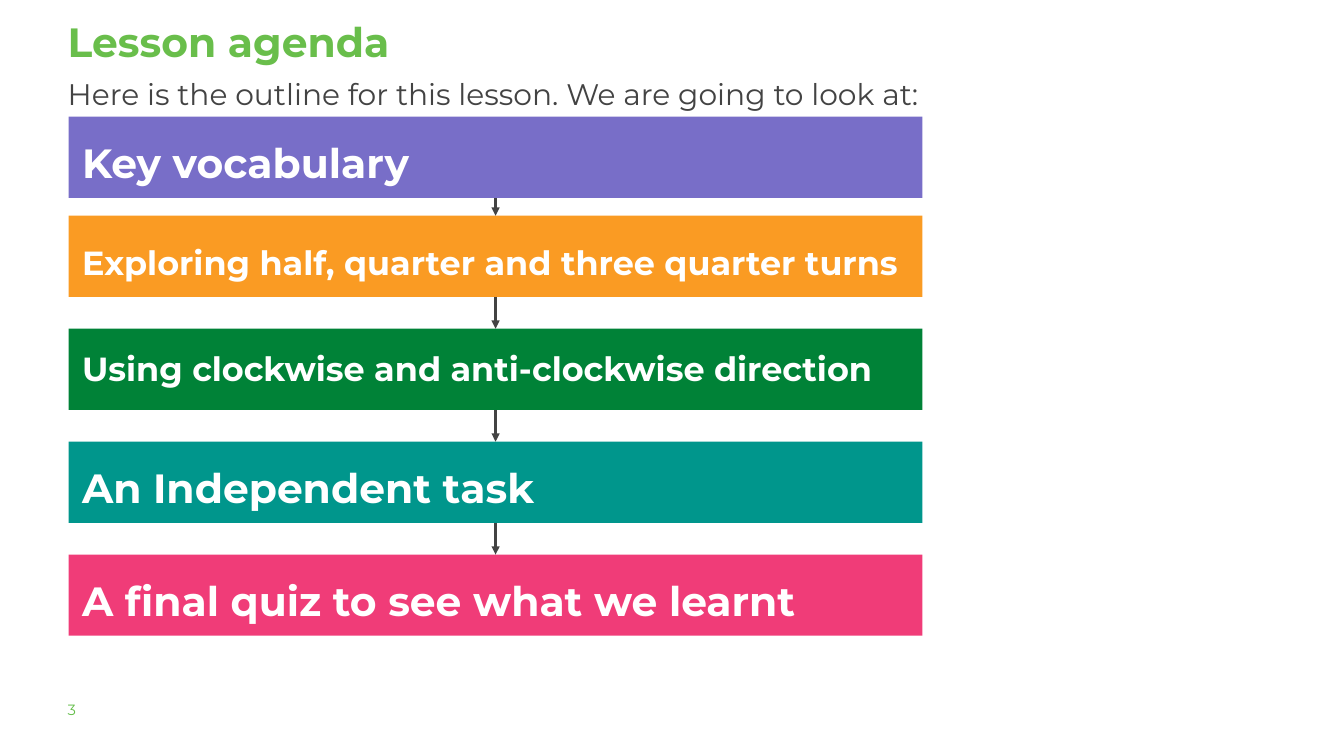
from lxml import etree
from pptx import Presentation
from pptx.dml.color import RGBColor
from pptx.enum import shapes, text
from pptx.oxml.ns import qn
from pptx.util import Pt

COLOURS = {
    "title": "69BE4B", "number": "65BE4B", "dark": "434343", "white": "FFFFFF",
    "purple": "786EC8", "orange": "FA9B23", "green": "008237",
    "teal": "00968C", "pink": "F03C78",
}
FONT = "Montserrat"
TOP, MIDDLE = text.MSO_ANCHOR.TOP, text.MSO_ANCHOR.MIDDLE

# wording, (left, top, width, height), size, colour, bold, line spacing
LABELS = [
    ("Lesson agenda", (54.7, 7.2, 976.3, 67.7), 33, "title", True, 1.15),
    ("Here is the outline for this lesson. We are going to look at:",
     (54.7, 52.6, 718.6, 41.8), 24, "dark", False, 1.3),
    ("3", (54.7, 565.9, 85.7, 21.6), 12, "number", False, 1),
]
# wording, fill, gap above, size, line spacing, anchor
STEPS = [
    ("Key vocabulary", "purple", 0, 33, 1.15, TOP),
    ("Exploring half, quarter and three quarter turns", "orange", 14.4, 27, 1.3, MIDDLE),
    ("Using clockwise and anti-clockwise direction", "green", 25.7, 27, 1.15, TOP),
    ("An Independent task", "teal", 25.7, 33, 1.15, TOP),
    ("A final quiz to see what we learnt", "pink", 25.7, 33, 1.15, TOP),
]
STEP_LEFT, STEP_TOP, STEP_WIDTH, STEP_HEIGHT = 55.5, 94.3, 689.7, 65.6
STEP_INSET = 10.8


def colour(name):
    return RGBColor.from_string(COLOURS[name])


def write(shape, wording, size, ink, bold, spacing, inset=0, anchor=TOP):
    frame = shape.text_frame
    frame.word_wrap = True
    frame.vertical_anchor = anchor
    frame.margin_left = frame.margin_right = Pt(inset)
    frame.margin_top = frame.margin_bottom = Pt(inset)
    paragraph = frame.paragraphs[0]
    paragraph.alignment = text.PP_ALIGN.LEFT
    paragraph.line_spacing = spacing
    run = paragraph.add_run()
    run.text = wording
    run.font.name = FONT
    run.font.size = Pt(size)
    run.font.bold = bold
    run.font.color.rgb = colour(ink)


def add_step(slide, top, wording, fill, size, spacing, anchor):
    step = slide.shapes.add_shape(
        shapes.MSO_SHAPE.RECTANGLE,
        Pt(STEP_LEFT), Pt(top), Pt(STEP_WIDTH), Pt(STEP_HEIGHT))
    step.shadow.inherit = False
    step.fill.solid()
    step.fill.fore_color.rgb = colour(fill)
    step.line.fill.background()
    write(step, wording, size, "white", True, spacing, STEP_INSET, anchor)
    return step


def add_arrow(slide, upper, lower):
    arrow = slide.shapes.add_connector(shapes.MSO_CONNECTOR.STRAIGHT, 0, 0, 0, 0)
    arrow.begin_connect(upper, 2)
    arrow.end_connect(lower, 0)
    arrow.line.width = Pt(2.25)
    arrow.line.color.rgb = colour("dark")
    etree.SubElement(arrow.line._get_or_add_ln(), qn("a:tailEnd"), type="triangle")
    etree.SubElement(arrow._element.spPr, qn("a:effectLst"))


def main():
    deck = Presentation()
    deck.slide_width, deck.slide_height = Pt(1085.76), Pt(607.68)
    slide = deck.slides.add_slide(deck.slide_layouts[6])

    for wording, box, size, ink, bold, spacing in LABELS:
        label = slide.shapes.add_textbox(*map(Pt, box))
        write(label, wording, size, ink, bold, spacing)

    top, previous = STEP_TOP, None
    for wording, fill, gap, size, spacing, anchor in STEPS:
        top += gap
        step = add_step(slide, top, wording, fill, size, spacing, anchor)
        if previous is not None:
            add_arrow(slide, previous, step)
        previous = step
        top += STEP_HEIGHT

    deck.save("out.pptx")


if __name__ == "__main__":
    main()
